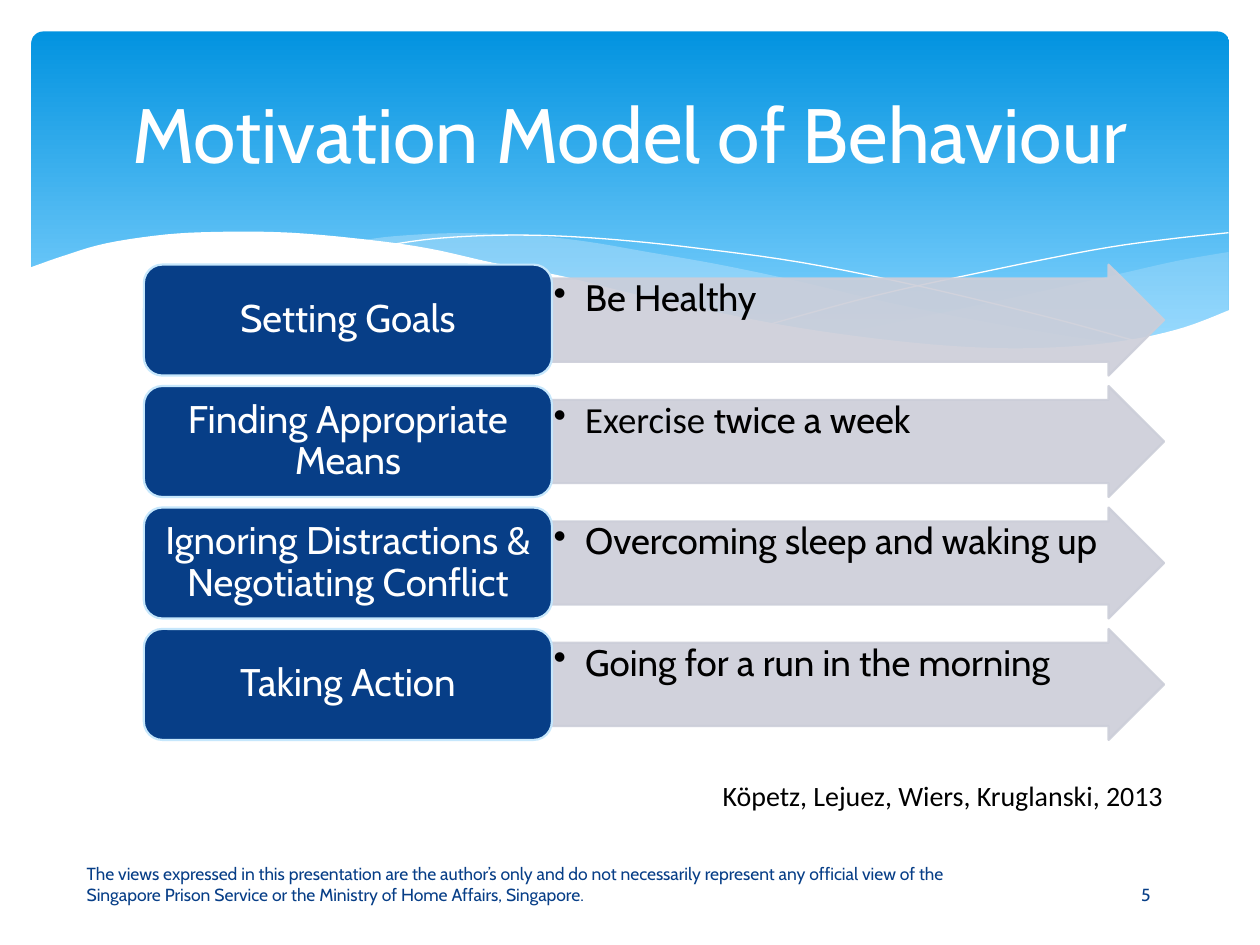
"""Build the slide on the motivation model of behaviour."""
from lxml import etree
from pptx import Presentation
from pptx.dml.color import RGBColor
from pptx.enum.shapes import MSO_SHAPE
from pptx.enum.text import MSO_ANCHOR, PP_ALIGN
from pptx.oxml.ns import qn
from pptx.util import Pt

ROUND, ARROW = MSO_SHAPE.ROUNDED_RECTANGLE, MSO_SHAPE.RIGHT_ARROW
LEFT, MID, RIGHT = PP_ALIGN.LEFT, PP_ALIGN.CENTER, PP_ALIGN.RIGHT
TOP, CENTRE = MSO_ANCHOR.TOP, MSO_ANCHOR.MIDDLE

COLORS = {"white": "FFFFFF", "black": "000000", "navy": "073E87",
          "pale": "C6E7FC", "grey": "CCCED9", "sky": "0293E0", "light": "83D3FE"}
MAIN, PLAIN = "Cabin", "Calibri"

TITLE = "Motivation Model of Behaviour"
STEPS = [
    ("Setting Goals", [("Be Healthy", MAIN)]),
    ("Finding Appropriate Means", [("Exercise", PLAIN), (" twice a week", MAIN)]),
    ("Ignoring Distractions & Negotiating Conflict",
     [("Overcoming sleep and waking up", MAIN)]),
    ("Taking Action", [("Going for a run in the morning", MAIN)]),
]
CREDIT = "Köpetz, Lejuez, Wiers, Kruglanski, 2013"
NOTICE = ("The views expressed in this presentation are the author’s only and do not "
          "necessarily represent any official view of the Singapore Prison Service "
          "or the Ministry of Home Affairs, Singapore.")
PAGE = "5"

WAVES = [
    {"curves": [[(702, 144), (673, 149), (642, 156), (620, 161), (561, 174),
                 (508, 185), (476, 191)],
                [(476, 191), (518, 196), (562, 199), (601, 200), (640, 197),
                 (673, 190), (702, 178)]],
     "fill": "pale", "alpha": 29},
    {"curves": [[(643, 197), (603, 191), (558, 183), (508, 173), (453, 160),
                 (410, 151), (370, 144), (335, 138), (302, 134.5), (260, 133.2),
                 (225, 135), (206, 137.5)],
                [(206, 137.5), (246, 143), (291, 152), (323, 160), (382, 173),
                 (433, 184), (479, 192), (520, 197), (565, 200), (603, 200),
                 (643, 197)]],
     "fill": "pale", "alpha": 40},
    {"curves": [[(222, 140), (247, 136.5), (278, 134.6), (312, 134.6), (352, 137),
                 (400, 142), (458, 150), (523, 163), (598, 181), (653, 196)]],
     "line": "white"},
    {"curves": [[(441, 185), (500, 169), (559, 156), (624, 143), (665, 137),
                 (702, 133)]],
     "line": "white"},
    {"curves": [[(703, 177), (677, 187), (647, 194), (612, 198), (571, 199),
                 (523, 196), (467, 189), (417, 180), (362, 168), (322, 158),
                 (281, 150), (245, 142), (210, 137), (166, 133), (127, 132.5),
                 (95, 134), (61, 139), (37, 146), (17, 153)],
                [(17, 237), (703, 237)]],
     "fill": "white"},
]


def color(name):
    return RGBColor.from_string(COLORS[name])


def paint(shape, fill=None, line=None, width=0, alpha=None):
    shape.shadow.inherit = False
    if fill:
        shape.fill.solid()
        shape.fill.fore_color.rgb = color(fill)
    else:
        shape.fill.background()
    if line:
        shape.line.color.rgb = color(line)
        shape.line.width = Pt(width)
    else:
        shape.line.fill.background()
    if alpha:
        for tone in shape._element.spPr.iter(qn("a:srgbClr")):
            etree.SubElement(tone, qn("a:alpha"), val=str(alpha * 1000))


def block(slide, kind, box, **look):
    shape = slide.shapes.add_shape(kind, *map(Pt, box))
    paint(shape, **look)
    return shape


def text(slide, box, runs, size, tint="black", align=LEFT, anchor=CENTRE,
         pad=(7.2, 3.6), space=1, bullet=False):
    frame = slide.shapes.add_textbox(*map(Pt, box)).text_frame
    frame.word_wrap = True
    frame.vertical_anchor = anchor
    frame.margin_left = frame.margin_right = Pt(pad[0])
    frame.margin_top = frame.margin_bottom = Pt(pad[1])
    para = frame.paragraphs[0]
    para.alignment = align
    para.line_spacing = space
    if bullet:
        props = para._p.get_or_add_pPr()
        props.set("marL", str(Pt(18)))
        props.set("indent", str(-Pt(18)))
        etree.SubElement(props, qn("a:buChar"), char="•")
    for words, face in runs:
        run = para.add_run()
        run.text = words
        run.font.name = face
        run.font.size = Pt(size)
        run.font.color.rgb = color(tint)


def smooth(knots, parts=5):
    if len(knots) < 3:
        return knots
    ends = [knots[0], *knots, knots[-1]]
    dots = [knots[0]]
    for a, b, c, d in zip(ends, ends[1:], ends[2:], ends[3:]):
        for i in range(1, parts + 1):
            t = i / parts
            dots.append(tuple(
                q + t * (r - p + t * (2 * p - 5 * q + 4 * r - s
                                      + t * (3 * q - p - 3 * r + s))) / 2
                for p, q, r, s in zip(a, b, c, d)))
    return dots


def wave(slide, curves, **look):
    dots = [(Pt(x), Pt(y)) for curve in curves for x, y in smooth(curve)]
    form = slide.shapes.build_freeform(*dots[0])
    form.add_line_segments(dots[1:], close="fill" in look)
    paint(form.convert_to_shape(), **look)


def banner(slide):
    panel = block(slide, ROUND, (18, 18, 684.5, 194.4))
    panel.adjustments[0] = 0.034
    panel.fill.gradient()
    panel.fill.gradient_angle = 270
    for stop, tone, place in zip(panel.fill.gradient_stops, ("sky", "light"), (0, 0.9)):
        stop.color.rgb = color(tone)
        stop.position = place
    for item in WAVES:
        wave(slide, **item)


def steps(slide):
    left, top, wide, high, pitch = 82.2, 151.2, 233.2, 63.4, 69.4
    mid = left + wide
    for i, (label, runs) in enumerate(STEPS):
        y = top + i * pitch
        arrow = block(slide, ARROW, (mid, y, 349.8, high), fill="grey",
                      line="grey", width=1.25, alpha=90)
        arrow.adjustments[0] = 0.75
        text(slide, (mid, y + high / 8, 326, high * 0.75), runs, 21,
             anchor=TOP, pad=(1, 1), space=0.9, bullet=True)
        block(slide, ROUND, (left, y, wide, high), fill="navy", line="pale", width=1.25)
        text(slide, (left + 3, y + 3, wide - 6, high - 6), [(label, MAIN)], 22,
             tint="white", align=MID, pad=(6.6, 3.3), space=0.9)


def main():
    deck = Presentation()
    deck.slide_width, deck.slide_height = Pt(720), Pt(540)
    slide = deck.slides.add_slide(deck.slide_layouts[6])
    banner(slide)
    text(slide, (36, 26.6, 648, 98.6), [(TITLE, MAIN)], 44, tint="white", align=MID)
    steps(slide)
    text(slide, (144.7, 441.4, 527, 26.6), [(CREDIT, PLAIN)], 16, align=RIGHT, anchor=TOP)
    text(slide, (42.5, 491, 544.3, 28.8), [(NOTICE, MAIN)], 10, tint="navy")
    text(slide, (609.1, 496.8, 91.4, 28.8), [(PAGE, MAIN)], 10, tint="navy", align=MID)
    deck.save("out.pptx")


if __name__ == "__main__":
    main()
